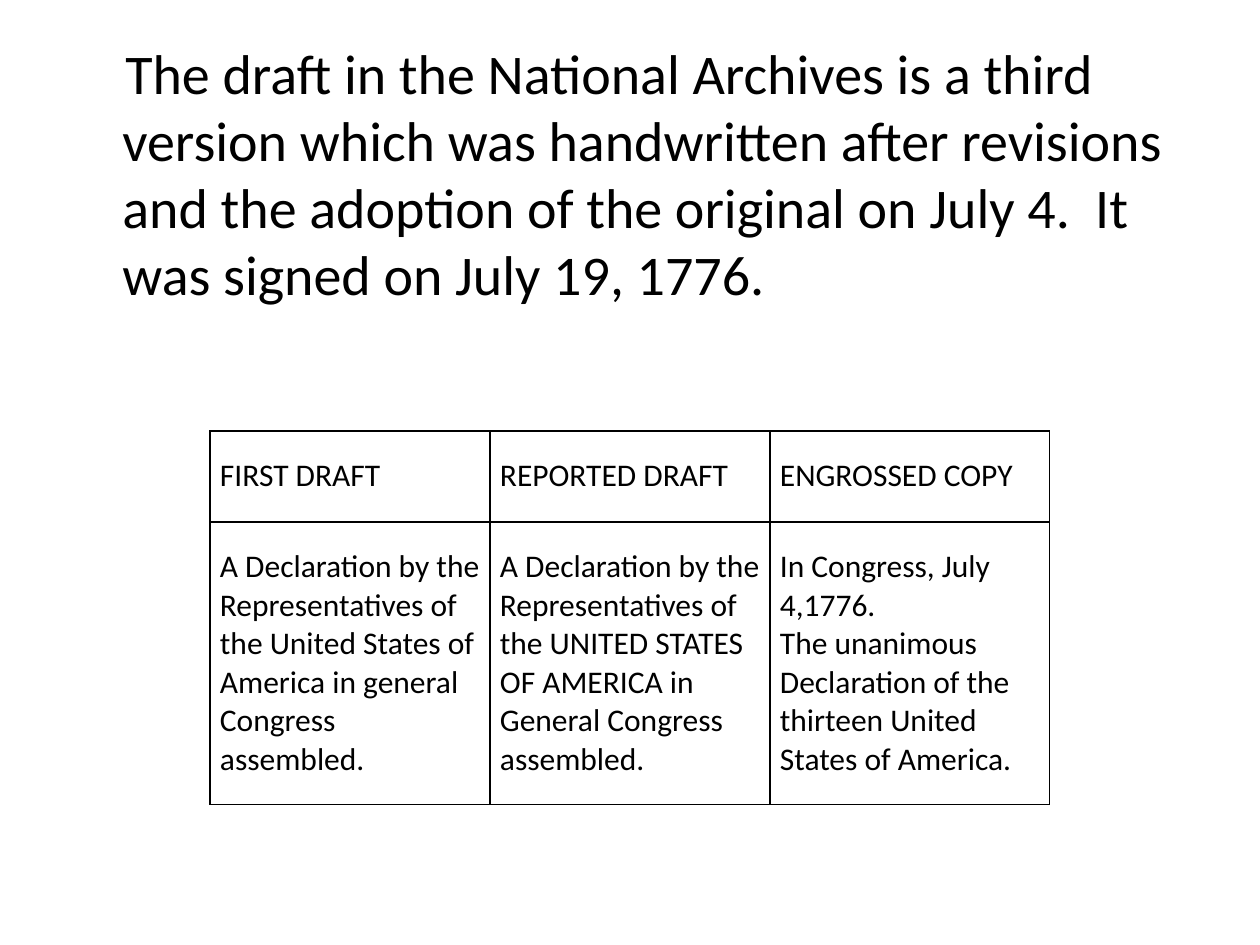
from dataclasses import dataclass

from lxml import etree
from pptx import Presentation
from pptx.dml.color import RGBColor
from pptx.oxml.ns import qn
from pptx.util import Emu, Pt

EMU_PER_PX = 914400 / 126
FONT = "Calibri"
BLACK = "000000"

STATEMENT = (
    "The draft in the National Archives is a third version which was handwritten "
    "after revisions and the adoption of the original on July 4.  It was signed "
    "on July 19, 1776."
)


@dataclass
class Draft:
    heading: str
    opening: str


DRAFTS = [
    Draft("FIRST DRAFT",
          "A Declaration by the Representatives of the United States of America "
          "in general Congress assembled."),
    Draft("REPORTED DRAFT",
          "A Declaration by the Representatives of the UNITED STATES OF AMERICA "
          "in General Congress assembled."),
    Draft("ENGROSSED COPY",
          "In Congress, July 4,1776.\n"
          "The unanimous Declaration of the thirteen United States of America."),
]


def px(length: int) -> Emu:
    return Emu(round(length * EMU_PER_PX))


def color(value: str) -> RGBColor:
    return RGBColor.from_string(value)


def set_text(text_frame, content: str, size: int) -> None:
    text_frame.text = content
    for paragraph in text_frame.paragraphs:
        for run in paragraph.runs:
            run.font.name = FONT
            run.font.size = Pt(size)
            run.font.color.rgb = color(BLACK)


def set_borders(cell, line_color: str, width: float) -> None:
    properties = cell._tc.get_or_add_tcPr()
    for position, side in enumerate(("a:lnL", "a:lnR", "a:lnT", "a:lnB")):
        line = etree.Element(qn(side), w=str(Pt(width)))
        fill = etree.SubElement(line, qn("a:solidFill"))
        etree.SubElement(fill, qn("a:srgbClr"), val=line_color)
        properties.insert(position, line)


def draw_statement(slide) -> None:
    shape = slide.shapes.add_textbox(px(63), px(32), px(1134), px(882))
    shape.text_frame.word_wrap = True
    set_text(shape.text_frame, STATEMENT, 32)
    paragraph = shape.text_frame.paragraphs[0]
    paragraph.space_before = Pt(2)
    # Left margin with a slightly deeper first line
    properties = paragraph._p.get_or_add_pPr()
    properties.set("marL", str(px(47)))
    properties.set("indent", str(px(3)))


def draw_drafts(slide, drafts: list[Draft]) -> None:
    column_width, row_heights = 280, (91, 283)
    table = slide.shapes.add_table(
        len(row_heights), len(drafts), px(210), px(431),
        px(column_width * len(drafts)), px(sum(row_heights))).table
    table.first_row = table.horz_banding = False
    for row, height in zip(table.rows, row_heights):
        row.height = px(height)
    for column, draft in enumerate(drafts):
        table.columns[column].width = px(column_width)
        for row, content in enumerate((draft.heading, draft.opening)):
            cell = table.cell(row, column)
            cell.margin_left = cell.margin_right = px(10)
            cell.margin_top = cell.margin_bottom = px(26)
            cell.fill.background()
            set_text(cell.text_frame, content, 18)
            set_borders(cell, BLACK, 0.75)


def main() -> None:
    presentation = Presentation()
    presentation.slide_width, presentation.slide_height = px(1260), px(945)
    slide = presentation.slides.add_slide(presentation.slide_layouts[6])

    # Statement above the comparison of the three drafts
    draw_statement(slide)
    draw_drafts(slide, DRAFTS)
    presentation.save("out.pptx")


if __name__ == "__main__":
    main()
